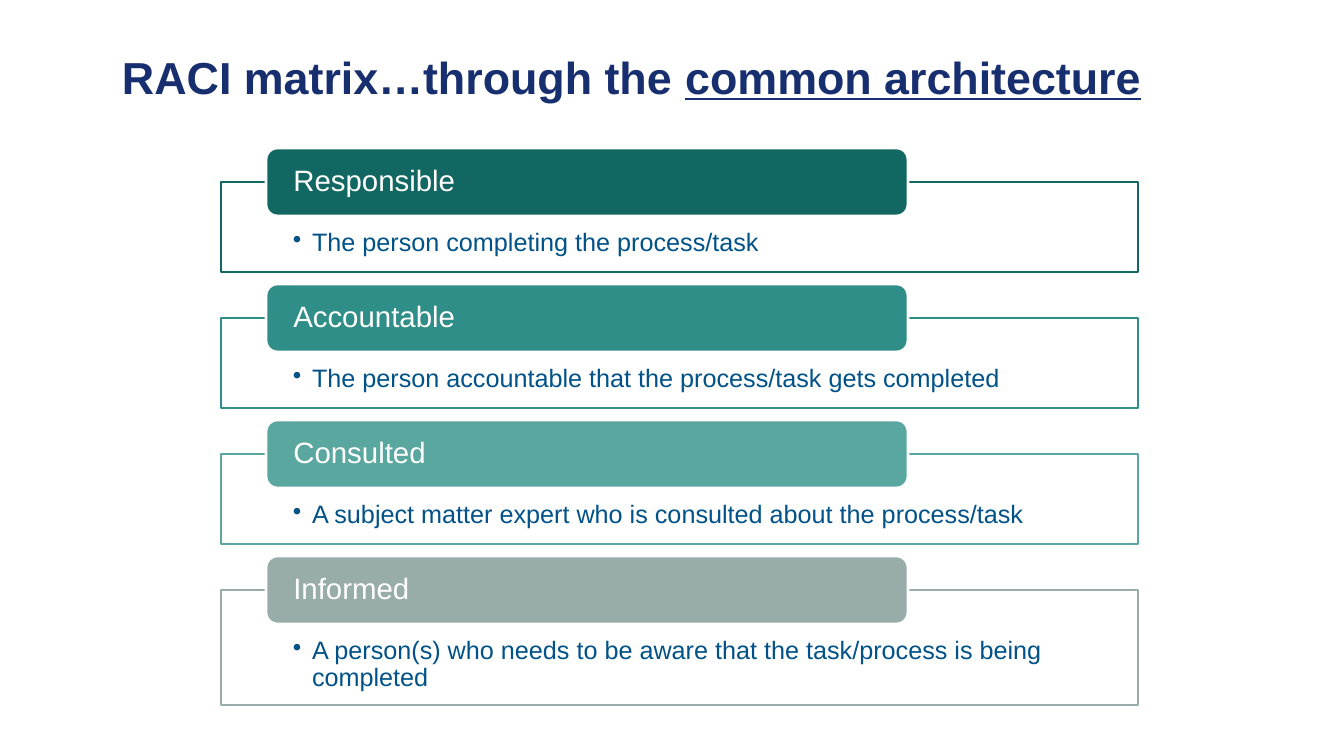
from pptx import Presentation
from pptx import util as u
from pptx.dml.color import RGBColor
from pptx.enum import shapes, text
from pptx.oxml.ns import qn
from lxml import etree

PX = 914400 / 100.8
HUES = {"title": "172E6F", "body": "005288", "white": "FFFFFF",
        "Responsible": "126762", "Accountable": "2F8E87",
        "Consulted": "5AA7A0", "Informed": "98ADAA"}
ROLES = [
    ("Responsible", "The person completing the process/task", 90),
    ("Accountable", "The person accountable that the process/task gets completed", 90),
    ("Consulted", "A subject matter expert who is consulted about the process/task", 90),
    ("Informed", "A person(s) who needs to be aware that the task/process is being completed", 115),
]
TOP, STEP = 182, 136


def px(n):
    return u.Emu(round(n * PX))


def hue(name):
    return RGBColor.from_string(HUES[name])


class Deck:
    """Holds the style and the current slide."""

    def __init__(self, font="Arial"):
        self.font = font
        self.prs = Presentation()
        self.prs.slide_width, self.prs.slide_height = px(1344), px(756)
        self.slide = self.prs.slides.add_slide(self.prs.slide_layouts[6])

    def label(self, shape, runs, size, color, pads, anchor, bold=False):
        frame = shape.text_frame
        frame.word_wrap = True
        frame.vertical_anchor = anchor
        (frame.margin_left, frame.margin_top,
         frame.margin_right, frame.margin_bottom) = map(px, pads)
        para = frame.paragraphs[0]
        para.alignment = text.PP_ALIGN.LEFT
        para.line_spacing = 0.9
        for words, under in runs:
            run = para.add_run()
            run.text = words
            font = run.font
            font.name, font.size, font.bold = self.font, u.Pt(size), bold
            font.color.rgb = hue(color)
            if under:
                font.underline = True
        return para

    def title(self, box, runs):
        shape = self.slide.shapes.add_textbox(*map(px, box))
        para = self.label(shape, runs, 32, "title", (10, 5, 10, 5),
                          text.MSO_ANCHOR.MIDDLE, True)
        para.line_spacing = 1.0

    def block(self, kind, box, fill, line):
        shape = self.slide.shapes.add_shape(kind, *map(px, box))
        shape.shadow.inherit = False
        shape.fill.solid()
        shape.fill.fore_color.rgb = hue(fill)
        shape.line.color.rgb = hue(line)
        shape.line.width = u.Pt(2)
        return shape

    def panel(self, box, line, words):
        shape = self.block(shapes.MSO_SHAPE.RECTANGLE, box, "white", line)
        tint = shape.element.spPr.find(qn("a:solidFill"))[0]
        etree.SubElement(tint, qn("a:alpha"), val="90000")
        para = self.label(shape, [(words, False)], 18, "body",
                          (72, 48, 72, 14), text.MSO_ANCHOR.TOP)
        props = para._p.get_or_add_pPr()
        props.set("marL", str(px(19)))
        props.set("indent", str(-px(19)))
        etree.SubElement(props, qn("a:buChar"), char="•")

    def tab(self, box, fill, words):
        shape = self.block(shapes.MSO_SHAPE.ROUNDED_RECTANGLE, box, fill, "white")
        self.label(shape, [(words, False)], 21, "white",
                   (24, 0, 24, 0), text.MSO_ANCHOR.MIDDLE)


def main():
    deck = Deck()
    deck.title((112, 22, 1139, 109),
               [("RACI matrix…through the ", False), ("common architecture", True)])
    for i, (role, duty, high) in enumerate(ROLES):
        y = TOP + i * STEP
        deck.panel((221, y, 917, high), role, duty)
        deck.tab((266, y - 34, 642, 68), role, role)
    deck.prs.save("out.pptx")


if __name__ == "__main__":
    main()
